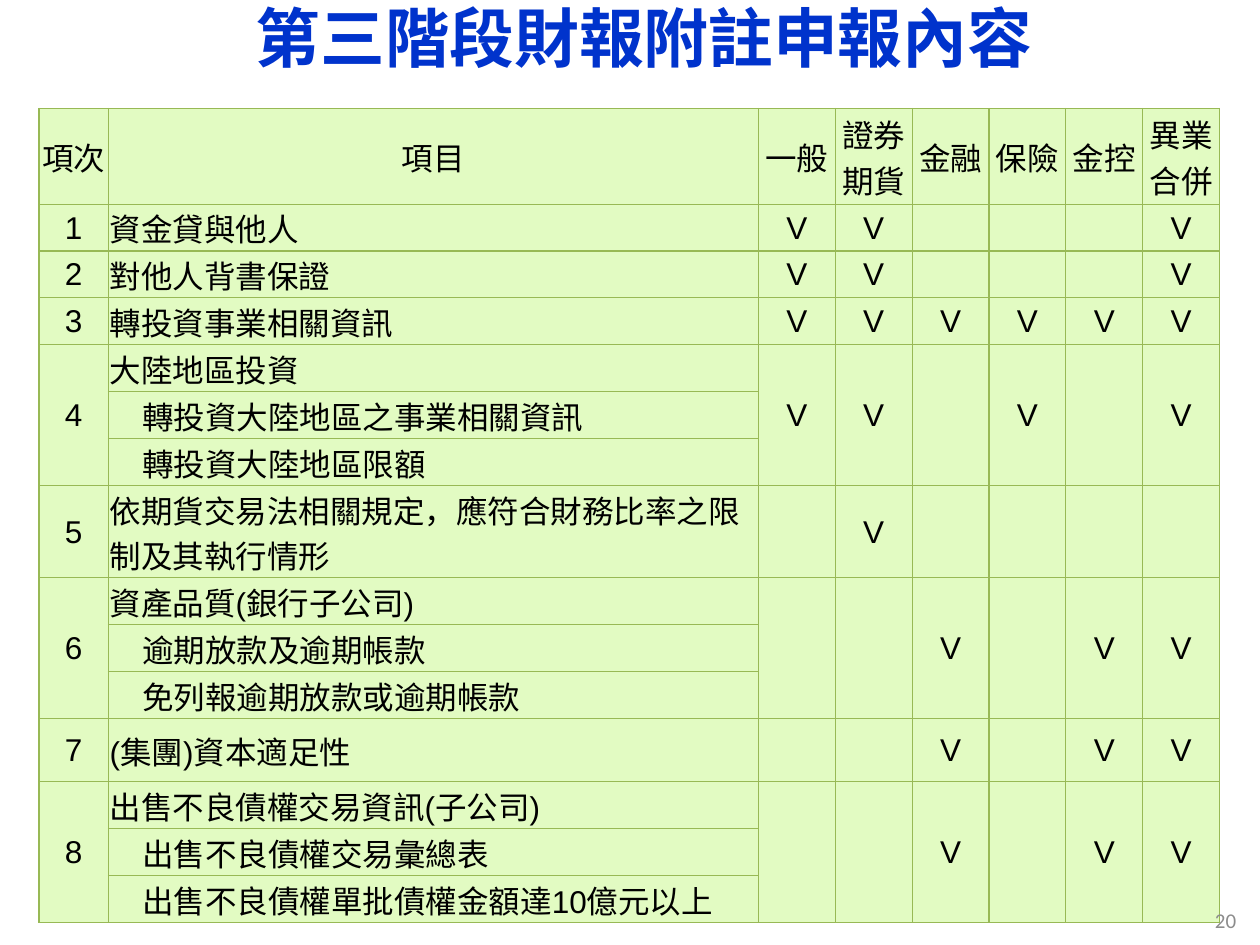
from lxml import etree
from pptx import Presentation
from pptx.dml.color import RGBColor
from pptx.enum.text import MSO_ANCHOR, MSO_AUTO_SIZE, PP_ALIGN
from pptx.oxml.ns import qn
from pptx.util import Inches, Pt

CENTER, LEFT, RIGHT = PP_ALIGN.CENTER, PP_ALIGN.LEFT, PP_ALIGN.RIGHT
TOP, MIDDLE = MSO_ANCHOR.TOP, MSO_ANCHOR.MIDDLE
NO_AUTOFIT = MSO_AUTO_SIZE.NONE

BLUE = RGBColor(0x00, 0x33, 0xCC)
BLACK = RGBColor(0x00, 0x00, 0x00)
GRAY = RGBColor(0x8C, 0x8C, 0x8C)
PALE_GREEN = RGBColor(0xE2, 0xFB, 0xC2)
GRID_GREEN = RGBColor(0x98, 0xB9, 0x55)

HEADERS = ["項次", "項目", "一般", "證券期貨", "金融", "保險", "金控", "異業合併"]

# Each entry: item with its sub-items, row height, industries that must file
ENTRIES = [
    (["資金貸與他人"], 0.37, ["一般", "證券期貨", "異業合併"]),
    (["對他人背書保證"], 0.37, ["一般", "證券期貨", "異業合併"]),
    (["轉投資事業相關資訊"], 0.37, HEADERS[2:]),
    (["大陸地區投資", "轉投資大陸地區之事業相關資訊", "轉投資大陸地區限額"],
     0.37, ["一般", "證券期貨", "保險", "異業合併"]),
    (["依期貨交易法相關規定，應符合財務比率之限制及其執行情形"], 0.73, ["證券期貨"]),
    (["資產品質(銀行子公司)", "逾期放款及逾期帳款", "免列報逾期放款或逾期帳款"],
     0.37, ["金融", "金控", "異業合併"]),
    (["(集團)資本適足性"], 0.5, ["金融", "金控", "異業合併"]),
    (["出售不良債權交易資訊(子公司)", "出售不良債權交易彙總表",
      "出售不良債權單批債權金額達10億元以上"], 0.37, ["金融", "金控", "異業合併"]),
]


def add_run(paragraph, text, size, font_name, color, bold=False):
    run = paragraph.add_run()
    run.text = text
    run.font.size = Pt(size)
    run.font.name = font_name
    run.font.bold = bold
    run.font.color.rgb = color


def write_cell(cell, text, align=CENTER, indent=0.01):
    cell.margin_left = Inches(indent)
    paragraph = cell.text_frame.paragraphs[0]
    paragraph.alignment = align
    add_run(paragraph, text, 18, "Arial", BLACK)


prs = Presentation()
prs.slide_width, prs.slide_height = Inches(10), Inches(7.5)
slide = prs.slides.add_slide(prs.slide_layouts[5])

# Title
title = slide.shapes.title
title.left, title.top = Inches(0.61), Inches(0)
title.width, title.height = Inches(9), Inches(0.7)
title.text_frame.auto_size = NO_AUTOFIT
title.text_frame.vertical_anchor = TOP
heading = title.text_frame.paragraphs[0]
heading.alignment = CENTER
heading.line_spacing = 0.9
add_run(heading, "第三階段財報附註申報內容", 37, "Times New Roman", BLUE, bold=True)

# Table grid
row_heights = [0.76] + [height for items, height, _ in ENTRIES for _ in items]
column_widths = [0.55, 5.16] + [0.61] * 6
table = slide.shapes.add_table(
    len(row_heights), len(column_widths), Inches(0.31), Inches(0.86),
    Inches(sum(column_widths)), Inches(sum(row_heights))).table
table.first_row = False
table.horz_banding = False
for row, height in zip(table.rows, row_heights):
    row.height = Inches(height)
for column, width in zip(table.columns, column_widths):
    column.width = Inches(width)

# Cell fill, margins and borders
for cell in table.iter_cells():
    cell.vertical_anchor = MIDDLE
    cell.margin_left = cell.margin_right = cell.margin_top = Inches(0.01)
    cell.margin_bottom = Inches(0)
    properties = cell._tc.get_or_add_tcPr()
    for side in ("a:lnL", "a:lnR", "a:lnT", "a:lnB"):
        border = etree.SubElement(properties, qn(side), w=str(Pt(0.75)))
        border_fill = etree.SubElement(border, qn("a:solidFill"))
        etree.SubElement(border_fill, qn("a:srgbClr"), val=str(GRID_GREEN))
    cell.fill.solid()
    cell.fill.fore_color.rgb = PALE_GREEN

# Header row
for col, header in enumerate(HEADERS):
    write_cell(table.cell(0, col), header)

# Entries, with number and marks merged across sub-items
top_row = 1
for number, (items, _, industries) in enumerate(ENTRIES, start=1):
    last_row = top_row + len(items) - 1
    for col, header in enumerate(HEADERS):
        if header == "項目":
            continue
        if last_row > top_row:
            table.cell(top_row, col).merge(table.cell(last_row, col))
        if header == "項次":
            write_cell(table.cell(top_row, col), str(number))
        elif header in industries:
            write_cell(table.cell(top_row, col), "V")
    for offset, item in enumerate(items):
        write_cell(table.cell(top_row + offset, 1), item, LEFT,
                   0.27 if offset else 0.01)
    top_row = last_row + 1

# Page number
page_number = slide.shapes.add_textbox(
    Inches(7.58), Inches(7.1), Inches(2.33), Inches(0.4)).text_frame
page_number.word_wrap = True
page_number.vertical_anchor = MIDDLE
page_number.paragraphs[0].alignment = RIGHT
add_run(page_number.paragraphs[0], "20", 12, "Calibri", GRAY)

prs.save("out.pptx")
